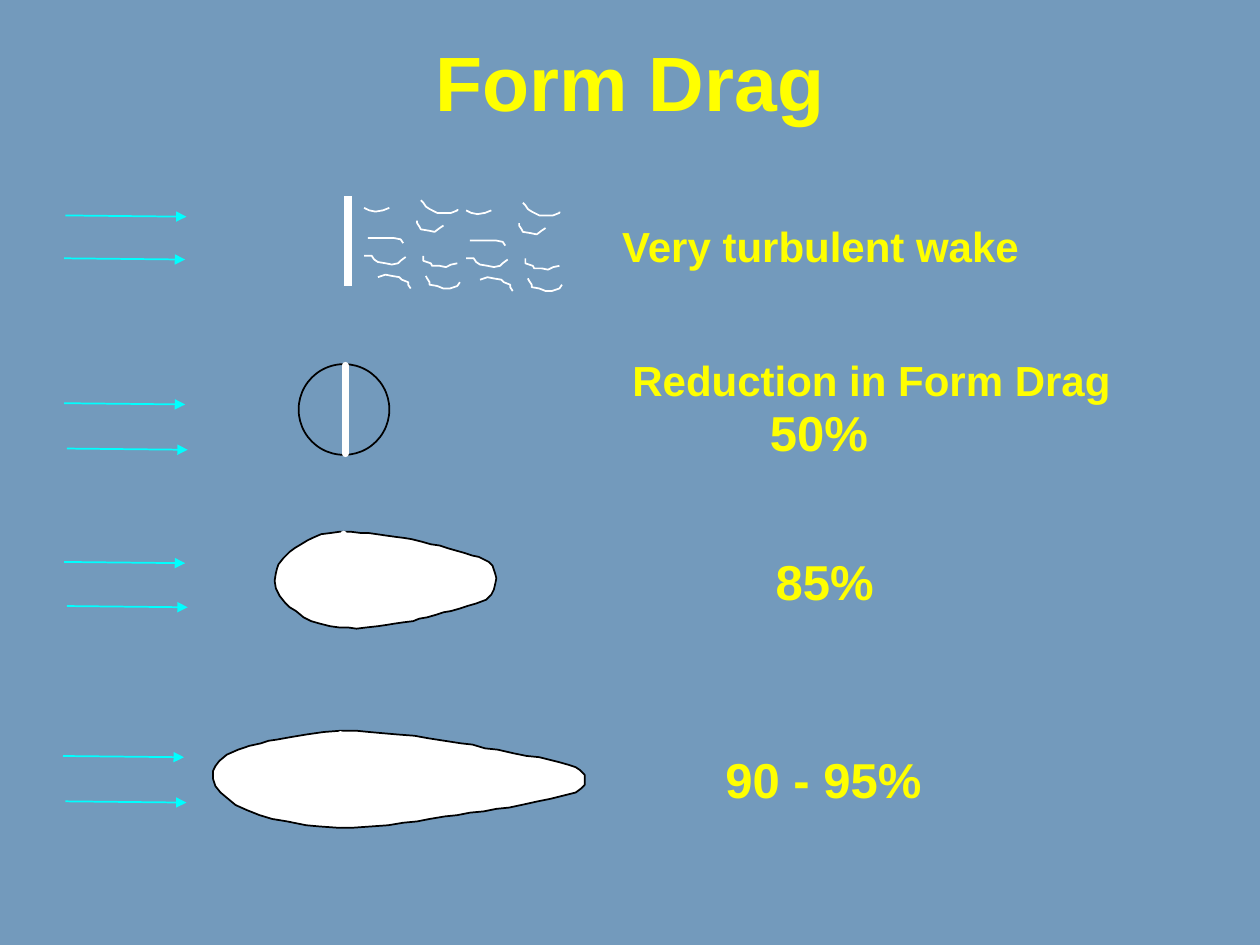
"""Build the Form Drag slide: four bodies in an airflow and the drag each one saves."""
from dataclasses import dataclass

from lxml import etree
from pptx import Presentation
from pptx.dml.color import RGBColor
from pptx.enum.shapes import MSO_CONNECTOR, MSO_SHAPE
from pptx.enum.text import MSO_ANCHOR, MSO_AUTO_SIZE, PP_ALIGN
from pptx.oxml.ns import qn
from pptx.util import Pt

LEFT, CENTER = PP_ALIGN.LEFT, PP_ALIGN.CENTER
TOP, BOTTOM = MSO_ANCHOR.TOP, MSO_ANCHOR.BOTTOM
FIT_TEXT = MSO_AUTO_SIZE.SHAPE_TO_FIT_TEXT
STRAIGHT = MSO_CONNECTOR.STRAIGHT
OVAL, RECTANGLE = MSO_SHAPE.OVAL, MSO_SHAPE.RECTANGLE
PX = 9144


@dataclass(frozen=True)
class Theme:
    sky: RGBColor = RGBColor(0x73, 0x9A, 0xBC)
    text: RGBColor = RGBColor(0xFF, 0xFF, 0x00)
    flow: RGBColor = RGBColor(0x00, 0xFF, 0xFF)
    body: RGBColor = RGBColor(0xFF, 0xFF, 0xFF)
    outline: RGBColor = RGBColor(0x00, 0x00, 0x00)
    font: str = "Arial"
    title: int = 44
    label: int = 24
    figure: int = 28
    thin: int = 1
    thick: int = 4


THEME = Theme()
SLIDE_SIZE = (1000, 750)

LABELS = [
    ("Form Drag", (334, 31, 332, 76), THEME.title, CENTER, BOTTOM, False),
    ("Very turbulent wake", (484, 175, 473, 46), THEME.label, LEFT, TOP, True),
    ("Reduction in Form Drag", (492, 281, 485, 46), THEME.label, LEFT, TOP, True),
    ("50%", (453, 320, 394, 52), THEME.figure, CENTER, TOP, True),
    ("85%", (605, 438, 99, 52), THEME.figure, CENTER, TOP, False),
    ("90 - 95%", (565, 595, 177, 52), THEME.figure, CENTER, TOP, False),
]

ARROW_STARTS = [(52, 171), (51, 205), (51, 320), (53, 356),
                (51, 446), (53, 481), (50, 600), (52, 636)]
ARROW_RUN, ARROW_DROP = 96, 1

PLATE = (272, 155, 8, 73)
CYLINDER = (237, 289, 72, 72)
CORE_TOPS = [(274, 290), (273, 424), (270, 583)]
CORE_HEIGHT = 70

SHORT_TEARDROP = [
    (230, 438), (234, 435), (239, 432), (244, 429), (248, 427), (255, 424),
    (263, 423), (270, 422), (278, 422), (286, 423), (292, 423), (299, 424),
    (306, 425), (313, 426), (321, 427), (327, 428), (335, 430), (342, 432),
    (349, 433), (355, 435), (362, 437), (369, 439), (375, 441), (380, 442),
    (384, 444), (388, 446), (391, 449), (393, 455), (394, 459), (393, 464),
    (392, 468), (390, 472), (386, 476), (378, 479), (371, 481), (365, 483),
    (358, 485), (352, 486), (346, 488), (339, 490), (333, 491), (328, 493),
    (320, 494), (313, 495), (307, 496), (300, 497), (291, 498), (283, 499),
    (276, 498), (269, 498), (262, 497), (254, 495), (247, 493), (241, 490),
    (235, 485), (230, 482), (226, 478), (222, 473), (219, 467), (218, 461),
    (219, 455), (220, 451), (221, 448), (225, 443),
]
LONG_TEARDROP = [
    (189, 595), (198, 592), (207, 590), (213, 588), (220, 587), (231, 585),
    (243, 583), (257, 581), (270, 580), (283, 580), (293, 581), (304, 582),
    (316, 583), (329, 584), (340, 586), (353, 588), (366, 590), (375, 591),
    (385, 594), (395, 595), (408, 598), (418, 600), (428, 601), (436, 603),
    (444, 605), (451, 607), (457, 609), (460, 611), (464, 615), (464, 619),
    (464, 623), (461, 626), (457, 629), (449, 631), (437, 634), (427, 636),
    (418, 638), (404, 641), (394, 642), (384, 644), (373, 645), (363, 647),
    (353, 648), (341, 650), (331, 652), (320, 653), (308, 655), (294, 656),
    (280, 657), (268, 657), (254, 656), (243, 655), (228, 652), (216, 650),
    (206, 647), (196, 643), (187, 639), (181, 634), (175, 629), (171, 624),
    (169, 618), (169, 612), (171, 608), (174, 604), (180, 599),
]

EDDIES = [
    [(289, 165), (293, 167), (298, 168), (304, 167), (309, 165)],
    [(331, 175), (331, 177), (333, 180), (334, 182), (340, 183), (345, 184),
     (349, 181), (352, 179)],
    [(289, 203), (295, 203), (297, 206), (300, 208), (306, 209), (311, 210),
     (316, 209), (318, 207), (322, 204)],
    [(292, 189), (297, 189), (302, 189), (308, 189), (313, 189), (318, 190),
     (320, 193)],
    [(334, 159), (336, 161), (338, 164), (341, 166), (347, 169), (352, 169),
     (358, 169), (363, 167), (363, 166)],
    [(300, 220), (306, 218), (311, 219), (317, 220), (319, 222), (324, 224),
     (324, 226), (326, 229)],
    [(336, 203), (336, 205), (336, 207), (342, 209), (343, 211), (349, 211),
     (354, 212), (358, 210), (363, 209)],
    [(338, 219), (339, 221), (341, 224), (341, 226), (347, 227), (352, 229),
     (357, 229), (363, 227), (365, 224)],
]
WAKE_OFFSETS = [(0, 0), (81, 2)]


def scaled(lengths):
    return [length * PX for length in lengths]


def paint(shape, fill, line):
    shape.shadow.inherit = False
    shape.fill.solid()
    shape.fill.fore_color.rgb = fill
    shape.line.color.rgb = line
    shape.line.width = Pt(THEME.thin)


def add_body(slide, kind, place, fill, line):
    paint(slide.shapes.add_shape(kind, *scaled(place)), fill, line)


def add_outline(slide, points, fill, line, close):
    builder = slide.shapes.build_freeform(*points[0], scale=PX)
    builder.add_line_segments(points[1:], close=close)
    paint(builder.convert_to_shape(), fill, line)


def add_line(slide, start, run, drop, color, width):
    x, y = start
    line = slide.shapes.add_connector(STRAIGHT, *scaled((x, y, x + run, y + drop)))
    line.line.color.rgb = color
    line.line.width = Pt(width)
    etree.SubElement(line._element.spPr, qn("a:effectLst"))
    return line.line._get_or_add_ln()


def add_arrow(slide, start):
    stroke = add_line(slide, start, ARROW_RUN, ARROW_DROP, THEME.flow, THEME.thin)
    etree.SubElement(stroke, qn("a:tailEnd"), type="triangle")


def add_core(slide, start):
    stroke = add_line(slide, start, 0, CORE_HEIGHT, THEME.body, THEME.thick)
    stroke.set("cap", "rnd")


def add_label(slide, text, place, size, align, anchor, wrap):
    frame = slide.shapes.add_textbox(*scaled(place)).text_frame
    frame.word_wrap = wrap
    frame.auto_size = FIT_TEXT
    frame.vertical_anchor = anchor
    para = frame.paragraphs[0]
    para.text = text
    para.alignment = align
    para.line_spacing = 0.9
    para.font.name = THEME.font
    para.font.size = Pt(size)
    para.font.bold = True
    para.font.color.rgb = THEME.text


def main():
    deck = Presentation()
    deck.slide_width, deck.slide_height = scaled(SLIDE_SIZE)
    slide = deck.slides.add_slide(deck.slide_layouts[6])
    slide.background.fill.solid()
    slide.background.fill.fore_color.rgb = THEME.sky

    add_body(slide, OVAL, CYLINDER, THEME.sky, THEME.outline)
    for teardrop in (SHORT_TEARDROP, LONG_TEARDROP):
        add_outline(slide, teardrop, THEME.body, THEME.outline, True)
    for start in CORE_TOPS:
        add_core(slide, start)
    for start in ARROW_STARTS:
        add_arrow(slide, start)
    for label in LABELS:
        add_label(slide, *label)
    add_body(slide, RECTANGLE, PLATE, THEME.body, THEME.sky)
    for dx, dy in WAKE_OFFSETS:
        for eddy in EDDIES:
            points = [(x + dx, y + dy) for x, y in eddy]
            add_outline(slide, points, THEME.sky, THEME.body, False)

    deck.save("out.pptx")


if __name__ == "__main__":
    main()
